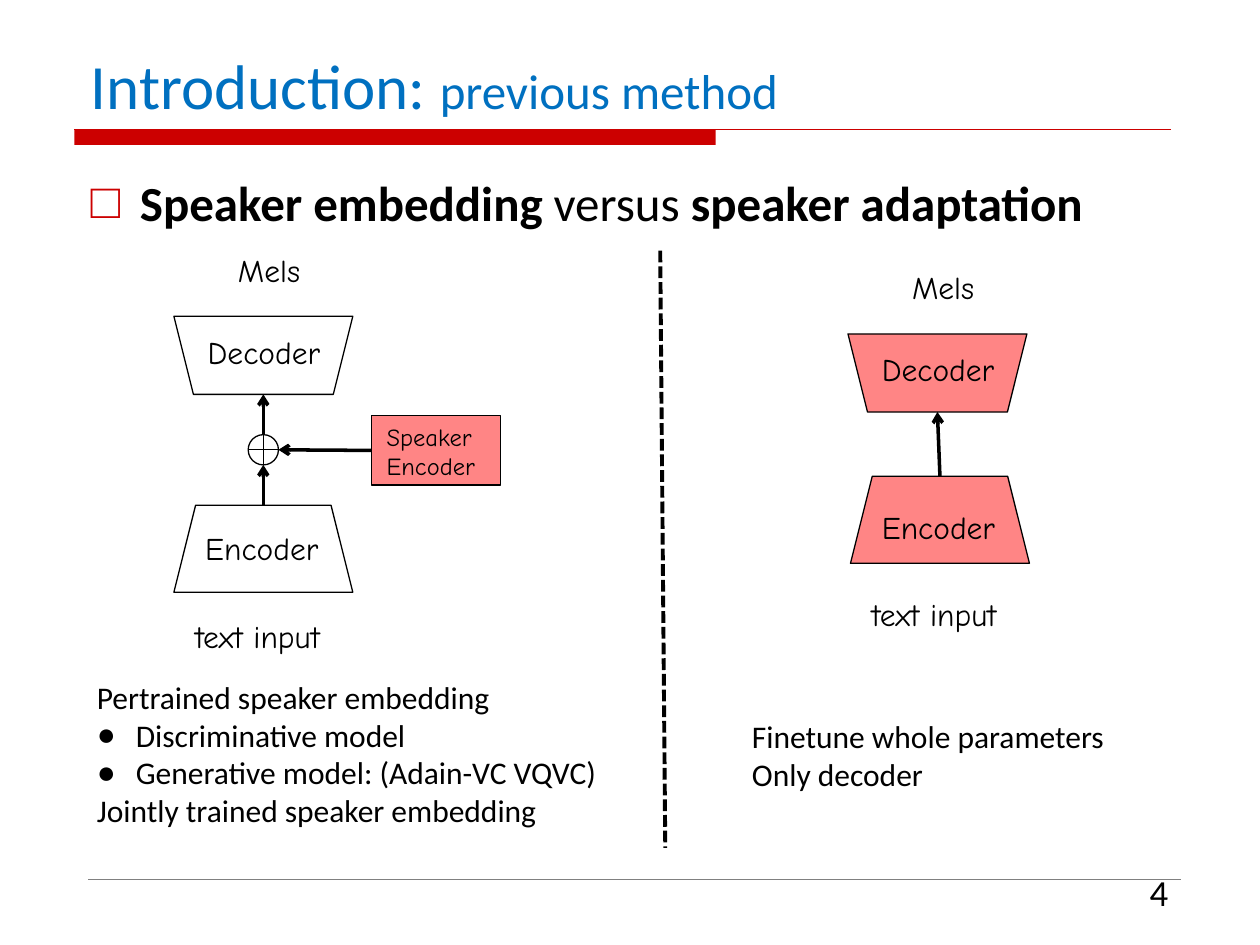
from lxml.etree import SubElement
from pptx import Presentation
from pptx.dml.color import RGBColor
from pptx.enum.dml import MSO_LINE_DASH_STYLE as DASH
from pptx.enum.shapes import MSO_CONNECTOR, MSO_SHAPE
from pptx.enum.text import MSO_ANCHOR, MSO_AUTO_SIZE, PP_ALIGN
from pptx.oxml.ns import qn
from pptx.util import Inches, Pt

COLORS = {"black": "000000", "white": "FFFFFF", "title": "0070C0",
          "red": "CC0000", "pink": "FF8585", "grey": "808080"}
BODY_FONT, DIAGRAM_FONT = "Calibri", "Comic Neue"


def rgb(name):
    return RGBColor.from_string(COLORS[name])


def box(left, top, width, height):
    return [Inches(value) for value in (left, top, width, height)]


def format_run(run, size, font=BODY_FONT, color="black", bold=False):
    run.font.size = Pt(size)
    run.font.name = font
    run.font.bold = bold
    run.font.color.rgb = rgb(color)


def set_bullet(paragraph, character, indent, color):
    properties = paragraph._p.get_or_add_pPr()
    properties.set("marL", str(Inches(indent)))
    properties.set("indent", str(-Inches(indent)))
    bullet_color = SubElement(properties, qn("a:buClr"))
    SubElement(bullet_color, qn("a:srgbClr"), val=COLORS[color])
    SubElement(properties, qn("a:buFont"), typeface="Arial")
    SubElement(properties, qn("a:buChar"), char=character)


def add_text(shapes, frame, lines, size, font=BODY_FONT, wrap=False, bullets=()):
    shape = shapes.add_textbox(*box(*frame))
    text_frame = shape.text_frame
    text_frame.word_wrap = wrap
    text_frame.text = "\n".join(lines)
    for index, paragraph in enumerate(text_frame.paragraphs):
        if index in bullets:
            set_bullet(paragraph, "●", 0.31, "black")
        for run in paragraph.runs:
            format_run(run, size, font)
    return shape


def add_block(shapes, kind, frame, fill=None, line="black"):
    shape = shapes.add_shape(kind, *box(*frame))
    shape.shadow.inherit = False
    if fill:
        shape.fill.solid()
        shape.fill.fore_color.rgb = rgb(fill)
    else:
        shape.fill.background()
    if line:
        shape.line.color.rgb = rgb(line)
        shape.line.width = Pt(0.75)
    else:
        shape.line.fill.background()
    return shape


def add_line(shapes, start, end, width, color="black", dash=None, arrow=False):
    line = shapes.add_connector(MSO_CONNECTOR.STRAIGHT, *box(*start, *end))
    line.line.color.rgb = rgb(color)
    line.line.width = Pt(width)
    if dash:
        line.line.dash_style = dash
    if arrow:
        SubElement(line.line._get_or_add_ln(), qn("a:tailEnd"), type="arrow")
    SubElement(line._element.spPr, qn("a:effectLst"))
    return line


def add_heading(slide, left, top, width, height):
    title = slide.shapes.title
    title.left, title.top, title.width, title.height = box(left, top, width, height)
    text_frame = title.text_frame
    text_frame.auto_size = MSO_AUTO_SIZE.NONE
    text_frame.vertical_anchor = MSO_ANCHOR.BOTTOM
    paragraph = text_frame.paragraphs[0]
    paragraph.alignment = PP_ALIGN.LEFT
    for text, size in (("Introduction: ", 36), ("previous method", 28)):
        run = paragraph.add_run()
        run.text = text
        format_run(run, size, color="title")
    rule_left, rule_top = left - 0.03, top + height + 0.01
    add_block(slide.shapes, MSO_SHAPE.RECTANGLE,
              (rule_left, rule_top, 5.09, 0.12), "red", None)
    add_line(slide.shapes, (rule_left, rule_top), (rule_left + 8.7, rule_top), 0.75, "red")


def add_topic(slide, left, top, width, height):
    body = slide.placeholders[1]
    body.left, body.top, body.width, body.height = box(left, top, width, height)
    body.text_frame.auto_size = MSO_AUTO_SIZE.NONE
    paragraph = body.text_frame.paragraphs[0]
    paragraph.space_before = Pt(5.6)
    set_bullet(paragraph, "□", 0.39, "red")
    for text, bold in (("Speaker embedding", True), (" versus ", False),
                       ("speaker adaptation", True)):
        run = paragraph.add_run()
        run.text = text
        format_run(run, 28, bold=bold)


def add_model(shapes, left, top, encoder_x, encoder_y, label_y, input_y, fill=None):
    encoder_left, encoder_top = left + encoder_x, top + encoder_y
    encoder = add_block(shapes, MSO_SHAPE.TRAPEZOID,
                        (encoder_left, encoder_top, 1.42, 0.69), fill)
    decoder = add_block(shapes, MSO_SHAPE.TRAPEZOID, (left, top + 0.57, 1.42, 0.62), fill)
    decoder.rotation = 180
    labels = (("Mels", left + 0.41, top, 0.75),
              ("Decoder", left + 0.17, top + 0.65, 1.18),
              ("Encoder", encoder_left + 0.15, encoder_top + label_y, 1.15),
              ("text input", encoder_left + 0.07, encoder_top + input_y, 1.38))
    for text, x, y, width in labels:
        add_text(shapes, (x, y, width, 0.4), [text], 18, DIAGRAM_FONT)
    return encoder


def add_embedding_diagram(slide, left, top):
    shapes = slide.shapes.add_group_shape().shapes
    encoder = add_model(shapes, left, top, 0, 2.07, 0.14, 0.84)
    center, sum_top, sum_size = left + 0.71, top + 1.51, 0.24
    add_block(shapes, MSO_SHAPE.FLOWCHART_OR,
              (center - sum_size / 2, sum_top, sum_size, sum_size), "white")
    speaker = add_block(shapes, MSO_SHAPE.RECTANGLE,
                        (left + 1.57, top + 1.36, 1.02, 0.55), "pink")
    add_text(shapes, (left + 1.59, top + 1.36, 1.01, 0.57),
             ["Speaker", "Encoder"], 14, DIAGRAM_FONT)
    text_arrow = add_line(shapes, (center, top + 2.07), (center, sum_top + sum_size),
                          2, arrow=True)
    text_arrow.begin_connect(encoder, 0)
    add_line(shapes, (center, sum_top), (center, top + 1.19), 2, arrow=True)
    speaker_arrow = add_line(shapes, (left + 1.57, top + 1.64),
                             (center + sum_size / 2, sum_top + sum_size / 2), 2, arrow=True)
    speaker_arrow.begin_connect(speaker, 1)


def add_adaptation_diagram(slide, left, top):
    shapes = slide.shapes.add_group_shape().shapes
    encoder = add_model(shapes, left, top, 0.02, 1.7, 0.2, 0.89, "pink")
    arrow = add_line(shapes, (left + 0.73, top + 1.7), (left + 0.71, top + 1.19),
                     2, arrow=True)
    arrow.begin_connect(encoder, 0)


def add_footer(slide, left, top, width):
    add_line(slide.shapes, (left, top), (left + width, top), 0.25, "grey")
    number = add_text(slide.shapes, (left + width - 2.17, top - 0.13, 2.17, 0.52),
                      ["4"], 21, wrap=True)
    number.text_frame.paragraphs[0].alignment = PP_ALIGN.RIGHT


def main():
    presentation = Presentation()
    presentation.slide_width, presentation.slide_height = Inches(10), Inches(7.5)
    slide = presentation.slides.add_slide(presentation.slide_layouts[1])
    add_heading(slide, 0.62, 0.21, 8.75, 0.81)
    add_topic(slide, 0.62, 1.32, 8.84, 0.7)
    add_embedding_diagram(slide, 1.38, 1.94)
    add_adaptation_diagram(slide, 6.73, 2.08)
    add_text(slide.shapes, (0.67, 5.33, 4.3, 1.31),
             ["Pertrained speaker embedding", "Discriminative model",
              "Generative model: (Adain-VC VQVC)", "Jointly trained speaker embedding"],
             18, wrap=True, bullets=(1, 2))
    add_text(slide.shapes, (5.87, 5.64, 4.3, 0.71),
             ["Finetune whole parameters", "Only decoder"], 18, wrap=True)
    add_line(slide.shapes, (5.24, 1.99), (5.28, 6.73), 2.25, dash=DASH.SQUARE_DOT)
    add_footer(slide, 0.7, 6.98, 8.67)
    presentation.save("out.pptx")


if __name__ == "__main__":
    main()
